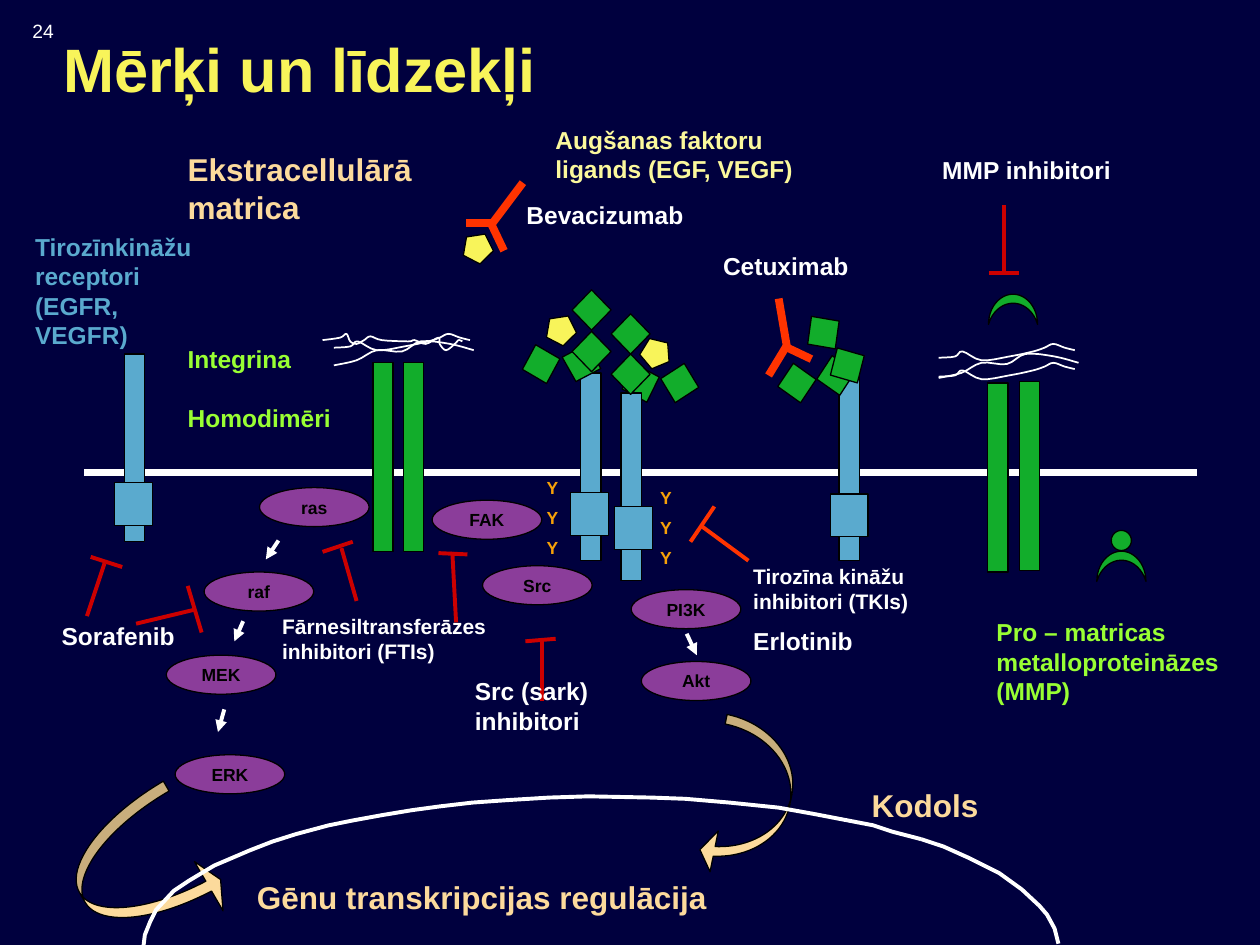
from lxml import etree
from pptx import Presentation
from pptx.dml.color import RGBColor
from pptx.enum.shapes import MSO_CONNECTOR as Connector, MSO_SHAPE as Shape
from pptx.enum.text import MSO_ANCHOR as Anchor, MSO_AUTO_SIZE as AutoSize, PP_ALIGN as Align
from pptx.oxml.ns import qn
from pptx.util import Cm, Pt

NAVY = RGBColor(0x00, 0x00, 0x3E)
BLACK = RGBColor(0x00, 0x00, 0x00)
WHITE = RGBColor(0xFF, 0xFF, 0xFF)
GREEN = RGBColor(0x12, 0xAD, 0x2B)
LIME = RGBColor(0x99, 0xFF, 0x33)
BLUE = RGBColor(0x5A, 0xAA, 0xCE)
YELLOW = RGBColor(0xF8, 0xF4, 0x5A)
PALE_YELLOW = RGBColor(0xFB, 0xF8, 0x9C)
SAND = RGBColor(0xFC, 0xDA, 0x9C)
AMBER = RGBColor(0xF6, 0xA1, 0x08)
PURPLE = RGBColor(0x8B, 0x3D, 0x9A)
ORANGE = RGBColor(0xFF, 0x33, 0x00)
RED = RGBColor(0xCC, 0x00, 0x00)

LOW_STRAND = [(0, .19), (.18, .15), (.34, .07), (.54, .08), (.69, 0), (.92, .02), (1.11, .07)]
MID_STRAND = [(0, .11), (.13, .1), (.19, .06), (.34, .13), (.56, .1), (.75, .06), (.84, .03),
              (.91, 0), (1, .03), (1.08, .05)]
TOP_STRAND = [(0, .06), (.14, .04), (.19, .01), (.22, .07), (.27, .09), (.33, .06), (.38, .03),
              (.47, .06), (.68, .07), (.73, .06), (.82, .09), (.92, .04), (.93, .09), (.98, .14),
              (1.05, .09), (1.08, .06), (1.11, .07)]
NUCLEUS_LEFT = [(1.14, 7.5), (1.15, 7.42), (1.19, 7.32), (1.24, 7.22), (1.38, 7.07), (1.5, 6.99),
                (1.7, 6.87), (1.98, 6.75), (2.16, 6.68), (2.35, 6.62), (2.61, 6.55), (2.81, 6.51),
                (3.03, 6.47), (3.27, 6.43), (3.49, 6.4), (3.75, 6.37), (4.03, 6.35), (4.36, 6.33),
                (4.67, 6.32), (5.17, 6.33), (5.44, 6.34), (5.79, 6.37), (6.18, 6.41), (6.46, 6.46),
                (6.93, 6.55), (7.08, 6.6), (7.31, 6.66)]
NUCLEUS_RIGHT = [(7.31, 6.66), (7.49, 6.72), (7.69, 6.81), (7.93, 6.93), (8.11, 7.06),
                 (8.25, 7.19), (8.31, 7.26), (8.37, 7.37), (8.4, 7.49)]


def inches(value):
    """Turn inches into a Cm length."""
    return Cm(value * 2.54)


def smooth_points(points, steps=4):
    """Return a Catmull-Rom curve sampled through the points."""
    padded = [points[0], *points, points[-1]]
    curve = [points[0]]
    for a, b, c, d in zip(padded, padded[1:], padded[2:], padded[3:]):
        for step in range(1, steps + 1):
            t = step / steps
            curve.append(tuple(
                (2 * q + (r - p) * t + (2 * p - 5 * q + 4 * r - s) * t ** 2
                 + (3 * q - p - 3 * r + s) * t ** 3) / 2
                for p, q, r, s in zip(a, b, c, d)))
    return curve


class Diagram:
    """Holds the style and the current slide."""

    def __init__(self, slide, font="Arial"):
        self.slide, self.font = slide, font
        slide.background.fill.solid()
        slide.background.fill.fore_color.rgb = NAVY

    def style(self, para, size, color, bold=True):
        """Format every run of a paragraph."""
        for span in para.runs:
            span.font.name, span.font.size, span.font.bold = self.font, Pt(size), bold
            span.font.color.rgb = color

    def title(self, text, left, top, width, height, size, color):
        """Place and format the title placeholder."""
        box = self.slide.shapes.title
        box.left, box.top, box.width, box.height = map(inches, (left, top, width, height))
        box.text_frame.text = text
        box.text_frame.vertical_anchor = Anchor.TOP
        box.text_frame.paragraphs[0].alignment = Align.LEFT
        self.style(box.text_frame.paragraphs[0], size, color)

    def text(self, place, *lines, bold=True):
        """Add a text box of (text, size, color, space before) lines."""
        box = self.slide.shapes.add_textbox(*map(inches, place))
        frame = box.text_frame
        frame.word_wrap, frame.auto_size = True, AutoSize.SHAPE_TO_FIT_TEXT
        for index, (text, size, color, space) in enumerate(lines):
            para = frame.add_paragraph() if index else frame.paragraphs[0]
            para.text = text
            para.space_before = Pt(space)
            self.style(para, size, color, bold)

    def shape(self, kind, place, color, turn=0, adjust=()):
        """Add a filled preset shape with a thin black outline."""
        shape = self.slide.shapes.add_shape(kind, *map(inches, place))
        shape.shadow.inherit = False
        shape.fill.solid()
        shape.fill.fore_color.rgb = color
        shape.line.color.rgb, shape.line.width = BLACK, Pt(0.75)
        shape.rotation = turn
        for index, value in enumerate(adjust):
            shape.adjustments[index] = value
        return shape

    def protein(self, name, left, top):
        """Add a labelled signalling protein."""
        frame = self.shape(Shape.OVAL, (left, top, .87, .31), PURPLE).text_frame
        frame.text, frame.word_wrap, frame.vertical_anchor = name, False, Anchor.MIDDLE
        frame.paragraphs[0].alignment = Align.CENTER
        self.style(frame.paragraphs[0], 10, BLACK)

    def line(self, ends, color, width, arrow=False):
        """Add a straight line, with an arrowhead at its end if asked."""
        line = self.slide.shapes.add_connector(Connector.STRAIGHT, *map(inches, ends))
        line.line.color.rgb, line.line.width = color, Pt(width)
        properties = line._element.spPr
        if arrow:
            etree.SubElement(properties.find(qn("a:ln")), qn("a:tailEnd"), type="triangle")
        etree.SubElement(properties, qn("a:effectLst"))

    def outline(self, points, width, left=0, top=0):
        """Add an open white outline."""
        start, *rest = [(inches(left + x), inches(top + y)) for x, y in points]
        builder = self.slide.shapes.build_freeform(*start)
        builder.add_line_segments(rest, close=False)
        shape = builder.convert_to_shape()
        shape.shadow.inherit = False
        shape.fill.background()
        shape.line.color.rgb, shape.line.width = WHITE, Pt(width)


def main():
    """Build the slide and save it."""
    deck = Presentation()
    deck.slide_width, deck.slide_height = inches(10), inches(7.5)
    page = Diagram(deck.slides.add_slide(deck.slide_layouts[5]))
    page.title("Mērķi un līdzekļi", .4, .2, 9.4, .68, 35, YELLOW)

    page.shape(Shape.DIAMOND, (4.93, 2.88, .31, .32), GREEN, 342.2)
    page.line((.67, 3.75, 9.5, 3.75), WHITE, 4.5)
    for left, top, box_left, box_top in [(4.61, 2.96, 4.53, 3.91), (4.93, 3.12, 4.88, 4.02),
                                         (6.66, 2.96, 6.59, 3.92), (.99, 2.81, .91, 3.83)]:
        page.shape(Shape.RECTANGLE, (left, top, .16, 1.49), BLUE)
        page.shape(Shape.RECTANGLE, (box_left, box_top, .3, .34), BLUE)
    for left, top in [(2.96, 2.88), (3.2, 2.88), (7.84, 3.04), (8.09, 3.03)]:
        page.shape(Shape.RECTANGLE, (left, top, .16, 1.5), GREEN)
    for left, top, turn in [(4.85, 2.49, 0), (4.85, 2.81, 0), (4.54, 2.3, 0), (4.14, 2.73, 344.3),
                            (4.46, 2.72, 286.4), (4.54, 2.63, 0), (5.24, 2.88, 12.9),
                            (6.17, 2.88, 349.6), (6.48, 2.82, 349.1), (6.57, 2.74, 330.2),
                            (6.38, 2.48, 323.8)]:
        page.shape(Shape.DIAMOND, (left, top, .31, .32), GREEN, turn)
    for left, top, turn in [(4.32, 2.51, 243.5), (5.08, 2.7, 193.6), (3.66, 1.86, 243.5)]:
        page.shape(Shape.REGULAR_PENTAGON, (left, top, .24, .23), YELLOW, turn)
    for left, top in [(7.92, 2.26), (8.78, 4.3)]:
        page.shape(Shape.MOON, (left, top, .24, .39), GREEN, 90, [.298])
    page.shape(Shape.OVAL, (8.82, 4.21, .16, .16), GREEN)

    for name, left, top in [("ras", 2.06, 3.87), ("FAK", 3.43, 3.97), ("Src", 3.83, 4.49),
                            ("raf", 1.62, 4.54), ("ERK", 1.39, 5.99), ("MEK", 1.32, 5.2),
                            ("PI3K", 5.01, 4.68), ("Akt", 5.09, 5.25)]:
        page.protein(name, left, top)

    for ends in [(3.7, 1.77, 3.94, 1.77), (4, 1.99, 3.9, 1.78), (3.91, 1.77, 4.15, 1.45),
                 (6.25, 2.78, 6.18, 2.37), (6.44, 2.85, 6.25, 2.76), (6.24, 2.75, 6.1, 2.98)]:
        page.line(ends, ORANGE, 4.5)
    for ends in [(2.21, 4.29, 2.11, 4.44), (1.93, 4.93, 1.86, 5.09), (1.78, 5.63, 1.73, 5.81),
                 (5.45, 5.03, 5.53, 5.2)]:
        page.line(ends, WHITE, 2.25, arrow=True)
    for ends in [(2.56, 4.38, 2.8, 4.3), (2.71, 4.35, 2.83, 4.77), (1.08, 4.95, 1.54, 4.84),
                 (3.59, 4.38, 3.62, 4.94), (4.3, 5.09, 4.3, 5.56), (3.48, 4.39, 3.71, 4.4),
                 (4.17, 5.09, 4.41, 5.07), (7.97, 1.63, 7.97, 2.17), (7.85, 2.17, 8.09, 2.17),
                 (1.49, 4.65, 1.6, 5.02), (.83, 4.47, .69, 4.89), (.72, 4.42, .97, 4.5)]:
        page.line(ends, RED, 2.25)
    for ends in [(5.56, 4.17, 5.94, 4.45), (5.67, 4.02, 5.48, 4.3)]:
        page.line(ends, ORANGE, 2.25)

    page.shape(Shape.CURVED_RIGHT_ARROW, (.63, 6.38, 1.02, 1.13), SAND, 329.8, [.089, .444, .106])
    page.shape(Shape.CURVED_LEFT_ARROW, (5.64, 5.72, .63, 1.26), SAND, 11.4, [.124, .525, .182])
    for strand, left, top in [(TOP_STRAND, 2.56, 2.64), (MID_STRAND, 2.65, 2.65),
                              (LOW_STRAND, 2.65, 2.71), (LOW_STRAND, 7.45, 2.81),
                              (MID_STRAND, 7.45, 2.73), (MID_STRAND, 7.45, 2.88)]:
        page.outline(smooth_points(strand), 1, left, top)
    for side in (NUCLEUS_LEFT, NUCLEUS_RIGHT):
        page.outline(side, 2.25)

    for place in [(5.14, 3.82, .71, .77), (4.24, 3.74, .32, .77)]:
        page.text(place, *[("Y", 10, AMBER, space) for space in (0, 5, 5)])
    page.text((1.39, 1.14, 2.12, 2.2), ("Ekstracellulārā matrica", 18, SAND, 0),
              ("Integrina", 14, LIME, 68), ("Homodimēri", 14, LIME, 16.5))
    page.text((5.88, 4.42, 1.77, .86), ("Tirozīna kināžu inhibitori (TKIs)", 12, WHITE, 0),
              ("Erlotinib", 14, WHITE, 7))
    for text, size, color, place in [
            ("Kodols", 18, SAND, (6.82, 6.19, 2.2, .4)),
            ("Gēnu transkripcijas regulācija", 18, SAND, (1.94, 6.92, 4.59, .4)),
            ("Bevacizumab", 14, WHITE, (4.08, 1.54, 2.36, .34)),
            ("Cetuximab", 14, WHITE, (5.64, 1.94, 2.13, .34)),
            ("Sorafenib", 14, WHITE, (.39, 4.88, 1.36, .34)),
            ("Fārnesiltransferāzes inhibitori (FTIs)", 12, WHITE, (2.14, 4.82, 2.09, .5)),
            ("MMP inhibitori", 14, WHITE, (7.38, 1.18, 1.56, .34)),
            ("Pro – matricas metalloproteināzes (MMP)", 14, LIME, (7.81, 4.85, 1.99, .81)),
            ("Src (sark) inhibitori", 14, WHITE, (3.67, 5.32, 1.5, .57)),
            ("Augšanas faktoru ligands (EGF, VEGF)", 14, PALE_YELLOW, (4.31, .94, 2.18, .57)),
            ("Tirozīnkināžu receptori (EGFR, VEGFR)", 14, BLUE, (.18, 1.79, 1.53, 1.04))]:
        page.text(place, (text, size, color, 0))
    page.text((.16, .1, .46, .29), ("24", 11, WHITE, 0), bold=False)
    deck.save("out.pptx")


if __name__ == "__main__":
    main()
